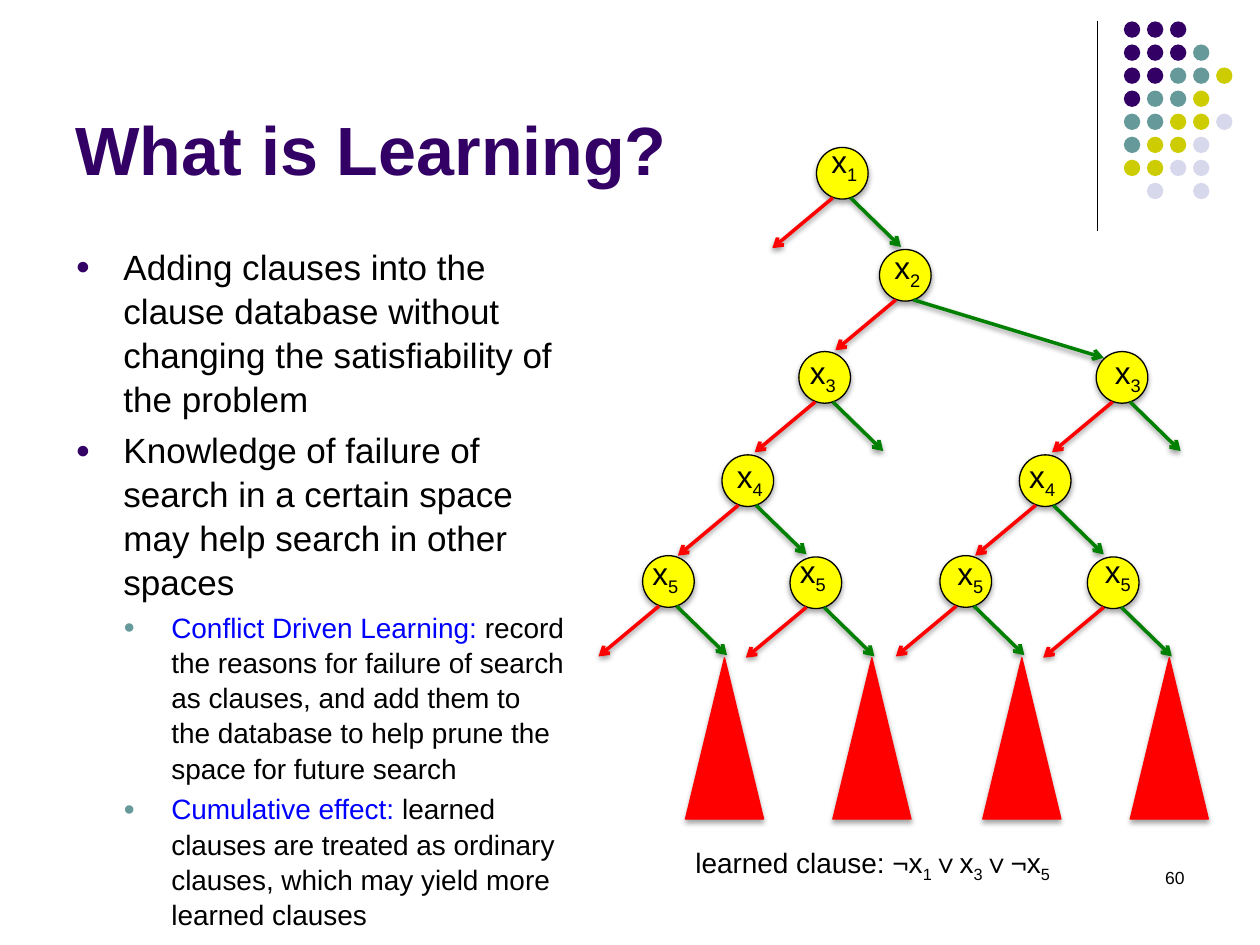
from pptx import Presentation
from pptx.dml.color import RGBColor
from pptx.enum.shapes import MSO_CONNECTOR, MSO_SHAPE
from pptx.enum.text import MSO_ANCHOR, MSO_AUTO_SIZE, PP_ALIGN
from pptx.oxml.ns import qn
from pptx.util import Inches, Pt
from lxml.etree import SubElement

FONT = "Arial"
COLORS = {
    "purple": "330066", "teal": "669999", "olive": "CCCC00", "lilac": "D8D8EC",
    "black": "000000", "blue": "0000FF", "yellow": "FFFF00", "red": "FF0000",
    "green": "008000",
}
COLUMNS, ROWS = 100, 75  # the slide as a grid of square cells
NODE = 4.1  # node diameter in cells


def cells(count):
    return Inches(count * 10 / COLUMNS)


def color(name):
    return RGBColor.from_string(COLORS[name])


def place(shape, left, top, width, height):
    shape.left, shape.top = cells(left), cells(top)
    shape.width, shape.height = cells(width), cells(height)


def add_run(paragraph, text, size, name="black", bold=False, subscript=False):
    run = paragraph.add_run()
    run.text = text
    run.font.name, run.font.size, run.font.bold = FONT, Pt(size), bold
    run.font.color.rgb = color(name)
    if subscript:
        run.font._element.set("baseline", "-25000")


def add_text(slide, box, parts, size, align=PP_ALIGN.LEFT):
    """Text box whose parts alternate between normal and subscript."""
    frame = slide.shapes.add_textbox(*map(cells, box)).text_frame
    frame.word_wrap = False
    paragraph = frame.paragraphs[0]
    paragraph.alignment = align
    for index, part in enumerate(parts):
        add_run(paragraph, part, size, subscript=index % 2 == 1)


def add_effects(shape, opacity=None, distance=0):
    """Empty effect list, or a soft shadow straight below."""
    properties = shape._element.spPr
    effects = properties.find(qn("a:effectLst"))
    if effects is None:
        effects = SubElement(properties, qn("a:effectLst"))
    if opacity:
        shadow = SubElement(effects, qn("a:outerShdw"), blurRad=str(Pt(3.1)),
                            dist=str(Pt(distance)), dir="5400000", rotWithShape="0")
        black = SubElement(shadow, qn("a:srgbClr"), val=COLORS["black"])
        SubElement(black, qn("a:alpha"), val=str(opacity * 1000))


def add_shape(slide, kind, box, fill, line=None):
    shape = slide.shapes.add_shape(kind, *map(cells, box))
    shape.shadow.inherit = False
    shape.fill.solid()
    shape.fill.fore_color.rgb = color(fill)
    if line:
        shape.line.color.rgb = color(line)
        shape.line.width = Pt(0.75)
        add_effects(shape, 35, 1.8)
    else:
        shape.line.fill.background()


def add_line(slide, start, end, name, width, arrow=False):
    line = slide.shapes.add_connector(MSO_CONNECTOR.STRAIGHT, *map(cells, (*start, *end)))
    line.line.color.rgb = color(name)
    line.line.width = Pt(width)
    if arrow:
        SubElement(line.line._get_or_add_ln(), qn("a:tailEnd"), type="arrow")
        add_effects(line, 38, 1.6)
    else:
        add_effects(line)


def add_corner_dots(slide, left, top):
    """Vertical rule with the dot pattern to its right."""
    add_line(slide, (left, top), (left, top + 16.6), "black", 0.75)
    names = {"p": "purple", "t": "teal", "o": "olive", "l": "lilac"}
    pattern = ["ppp", "pppt", "pptto", "ptto", "ttool", "tool", "ooll", " l l"]
    pitch, diameter = 1.83, 1.3
    for row, marks in enumerate(pattern):
        for column, mark in enumerate(marks):
            if mark in names:
                box = (left + 2.1 + column * pitch, top + row * pitch, diameter, diameter)
                add_shape(slide, MSO_SHAPE.OVAL, box, names[mark])


def fill_title(slide, box):
    title = slide.shapes.title
    place(title, *box)
    frame = title.text_frame
    frame.auto_size = MSO_AUTO_SIZE.NONE
    frame.vertical_anchor = MSO_ANCHOR.BOTTOM
    frame.paragraphs[0].alignment = PP_ALIGN.LEFT
    add_run(frame.paragraphs[0], "What is Learning?", 39, "purple", bold=True)


def format_bullet(paragraph, level, name):
    properties = paragraph._p.get_or_add_pPr()
    properties.set("marL", str(cells(3.8 * (level + 1))))
    properties.set("indent", str(-cells(3.8)))
    SubElement(SubElement(properties, qn("a:buClr")), qn("a:srgbClr"), val=COLORS[name])
    SubElement(properties, qn("a:buSzPct"), val="70000")
    SubElement(properties, qn("a:buFont"), typeface=FONT)
    SubElement(properties, qn("a:buChar"), char="●")


def fill_body(slide, box):
    body = slide.placeholders[1]
    place(body, *box)
    frame = body.text_frame
    frame.auto_size = MSO_AUTO_SIZE.NONE
    items = [
        (0, "", "Adding clauses into the clause database without changing the "
                "satisfiability of the problem"),
        (0, "", "Knowledge of failure of search in a certain space may help search "
                "in other spaces"),
        (1, "Conflict Driven Learning: ",
         "record the reasons for failure of search as clauses, and add them to the "
         "database to help prune the space for future search"),
        (1, "Cumulative effect: ",
         "learned clauses are treated as ordinary clauses, which may yield more "
         "learned clauses"),
    ]
    for index, (level, lead, text) in enumerate(items):
        paragraph = frame.add_paragraph() if index else frame.paragraphs[0]
        size = (20, 16)[level]
        paragraph.level = level
        paragraph.line_spacing = 1.05
        paragraph.space_before = Pt(size * 0.2)
        format_bullet(paragraph, level, ("purple", "teal")[level])
        if lead:
            add_run(paragraph, lead, size, "blue")
        add_run(paragraph, text, size)


def add_search_tree(slide, left, top):
    """Decision tree: nodes with a red and a green branch, then failed subtrees."""
    long_branch, branch = (15.1, 4.6), (4, 3.9)
    # digit, column, row, label shift, green branch
    nodes = [("1", 17.8, 0, (0.2, -0.9), branch), ("2", 22.8, 8.1, (0.2, -0.6), long_branch)]
    failures = []
    for column, shifts in ((16.4, (-0.1, 0.2, -0.2, -0.2)), (40, (0.5, -0.2, 0.4, 0.4))):
        subtree = [("3", 0, 16.2, -0.4), ("4", -6.1, 24.4, -0.3),
                   ("5", -12.4, 32.4, -0.6), ("5", -0.7, 32.5, -0.9)]
        for (digit, offset, row, rise), shift in zip(subtree, shifts):
            nodes.append((digit, column + offset, row, (shift, rise), branch))
            if digit == "5":
                failures.append(column + offset + 3.4)

    for digit, column, row, shift, green in nodes:
        x, y = left + column, top + row
        add_shape(slide, MSO_SHAPE.OVAL, (x, y, NODE, NODE), "yellow", "black")
        for name, start, (across, down) in (("red", 1.3, (-4.8, 4)), ("green", 2.7, green)):
            add_line(slide, (x + start, y + 4), (x + start + across, y + 4 + down),
                     name, 2, arrow=True)
    for column in failures:
        add_shape(slide, MSO_SHAPE.ISOSCELES_TRIANGLE,
                  (left + column, top + 40.5, 6.2, 12.8), "red", "red")
    for digit, column, row, shift, green in nodes:
        label = (left + column + shift[0], top + row + shift[1], 4.2, 4)
        add_text(slide, label, ["x", digit], 18)


def main():
    presentation = Presentation()
    presentation.slide_width, presentation.slide_height = cells(COLUMNS), cells(ROWS)
    slide = presentation.slides.add_slide(presentation.slide_layouts[1])
    add_corner_dots(slide, 87.1, 1.7)
    fill_title(slide, (5, 1.3, 82.5, 14.2))
    fill_body(slide, (5, 18.8, 40.8, 48.2))
    # learned clause and slide number
    add_text(slide, (54.2, 66.6, 32.5, 3.7),
             ["learned clause: ¬x", "1", "∨x", "3", "∨¬x", "5"], 16)
    add_text(slide, (71.7, 68.3, 23.3, 5), ["60"], 10, PP_ALIGN.RIGHT)
    add_search_tree(slide, 47, 11.7)
    presentation.save("out.pptx")


if __name__ == "__main__":
    main()
